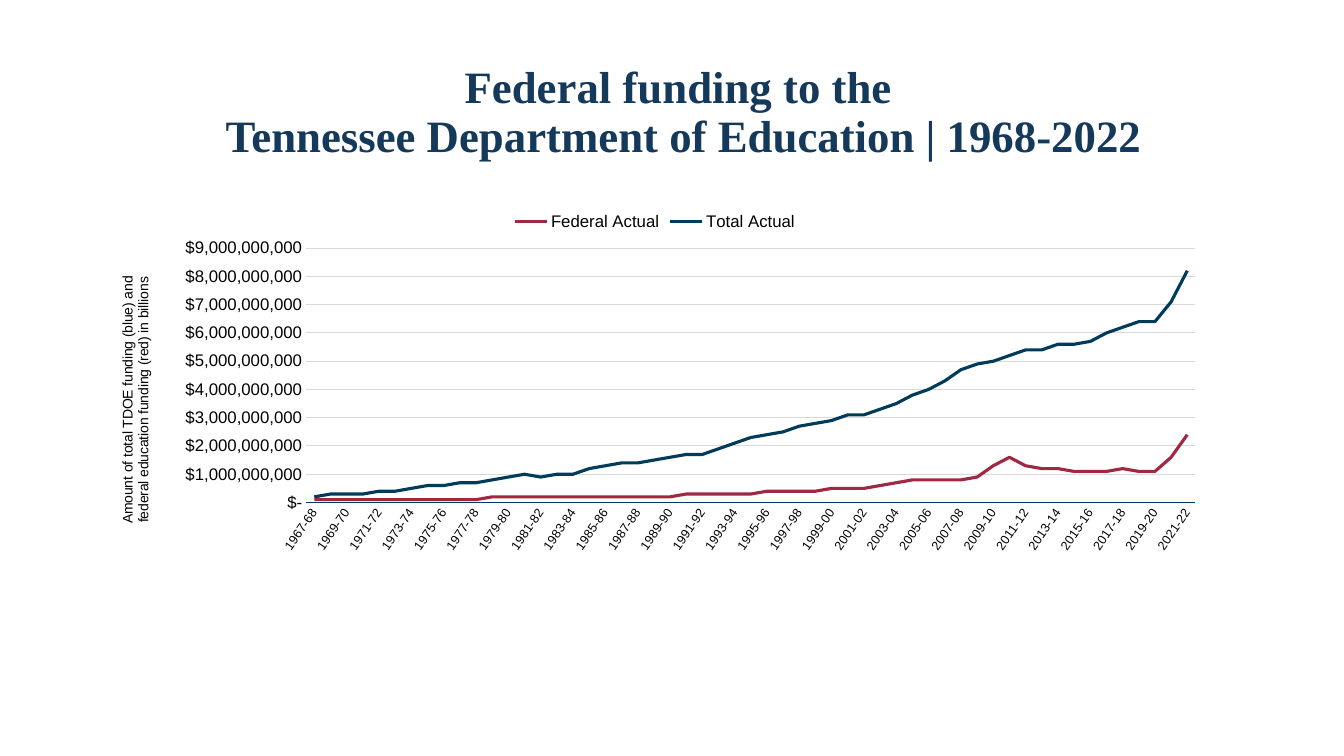
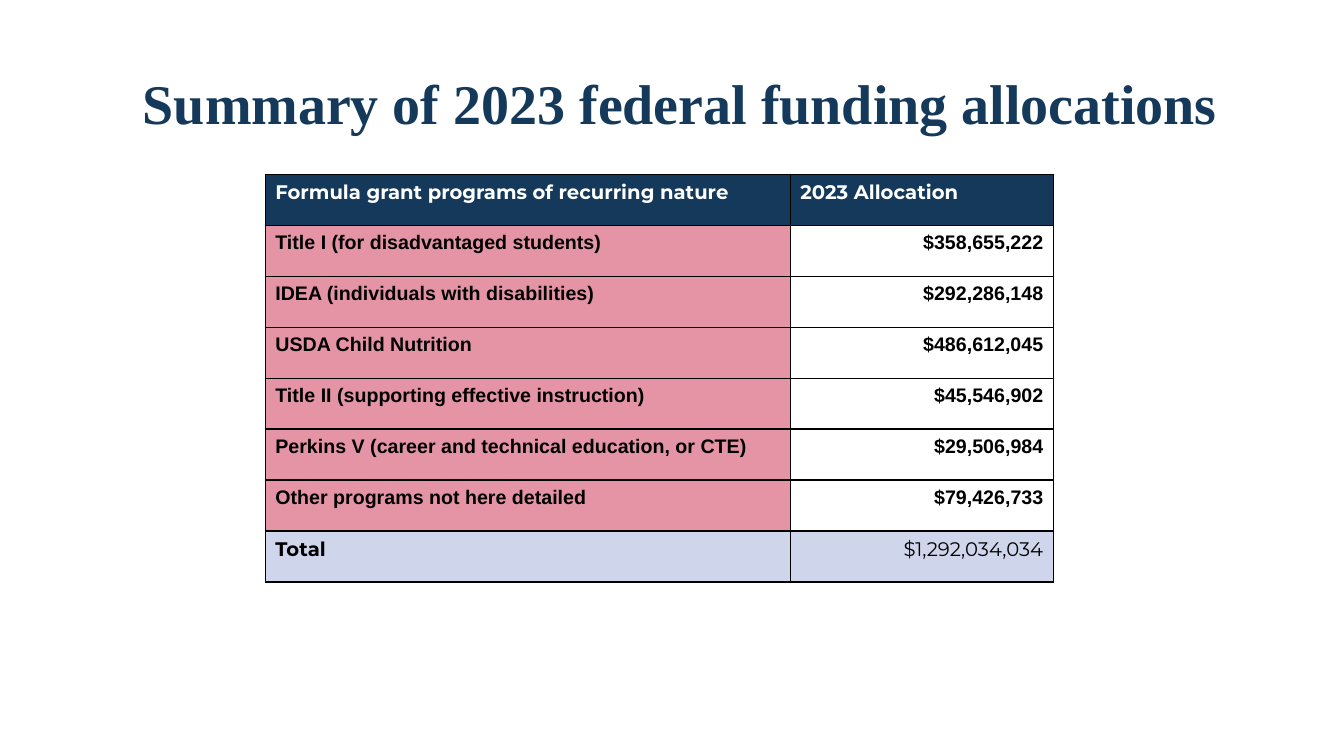
from lxml import etree
from pptx import Presentation
from pptx.chart import data as chart_data
from pptx.dml.color import RGBColor
from pptx.enum import chart as ch, text
from pptx.oxml import ns, parse_xml
from pptx.util import Pt

COLORS = {
    "navy": "14395A", "blue": "003C5A", "red": "A02843", "pink": "E494A5",
    "lavender": "CFD5EA", "grid": "D9D9D9", "black": "000000", "white": "FFFFFF",
}

TENTHS = 10 ** 8
FEDERAL = [
    1, 1, 1, 1, 1, 1, 1, 1, 1, 1, 1, 2, 2, 2, 2, 2, 2, 2, 2, 2, 2, 2, 2, 3, 3, 3, 3, 3,
    4, 4, 4, 4, 5, 5, 5, 6, 7, 8, 8, 8, 8, 9, 13, 16, 13, 12, 12, 11, 11, 11, 12, 11,
    11, 16, 24,
]
TOTAL = [
    2, 3, 3, 3, 4, 4, 5, 6, 6, 7, 7, 8, 9, 10, 9, 10, 10, 12, 13, 14, 14, 15, 16, 17,
    17, 19, 21, 23, 24, 25, 27, 28, 29, 31, 31, 33, 35, 38, 40, 43, 47, 49, 50, 52, 54,
    54, 56, 56, 57, 60, 62, 64, 64, 71, 82,
]
SCHOOL_YEARS = [f"{year}-{(year + 1) % 100:02d}" for year in range(1967, 2022)]

ALLOCATIONS = [
    ("Title I (for disadvantaged students)", "$358,655,222"),
    ("IDEA (individuals with disabilities)", "$292,286,148"),
    ("USDA Child Nutrition", "$486,612,045"),
    ("Title II (supporting effective instruction)", "$45,546,902"),
    ("Perkins V (career and technical education, or CTE)", "$29,506,984"),
    ("Other programs not here detailed", "$79,426,733"),
]


class Deck:
    title_font = "Times New Roman"
    body_font = "Arial"
    accent_font = "Montserrat"

    def __init__(self):
        self.prs = Presentation()
        self.prs.slide_width, self.prs.slide_height = Pt(960), Pt(540)
        self.slide = None

    def color(self, name):
        return RGBColor.from_string(COLORS[name])

    def style(self, font, size, color="black", name=body_font, bold=False):
        font.size, font.name, font.bold = Pt(size), name, bold
        font.color.rgb = self.color(color)

    def line(self, line, color, width):
        line.color.rgb = self.color(color)
        line.width = Pt(width)

    def add_slide(self, heading, box, size):
        self.slide = self.prs.slides.add_slide(self.prs.slide_layouts[5])
        title = self.slide.shapes.title
        title.left, title.top, title.width, title.height = map(Pt, box)
        frame = title.text_frame
        frame.text = heading
        frame.word_wrap = True
        frame.auto_size = text.MSO_AUTO_SIZE.NONE
        frame.vertical_anchor = text.MSO_ANCHOR.MIDDLE
        paragraph = frame.paragraphs[0]
        paragraph.alignment = text.PP_ALIGN.CENTER
        paragraph.line_spacing = 0.9
        self.style(paragraph.font, size, "navy", self.title_font, True)

    def place(self, element, index, **fractions):
        for old in element.findall(ns.qn("c:layout")):
            element.remove(old)
        layout = etree.Element(ns.qn("c:layout"))
        manual = etree.SubElement(layout, ns.qn("c:manualLayout"))
        if "w" in fractions:
            etree.SubElement(manual, ns.qn("c:layoutTarget")).set("val", "inner")
        for axis in "xy":
            etree.SubElement(manual, ns.qn(f"c:{axis}Mode")).set("val", "edge")
        for key, value in fractions.items():
            etree.SubElement(manual, ns.qn(f"c:{key}")).set("val", str(value))
        element.insert(index, layout)

    def line_chart(self, box, categories, series, axis_lines):
        data = chart_data.CategoryChartData()
        data.categories = categories
        for name, values, _ in series:
            data.add_series(name, values)
        chart = self.slide.shapes.add_chart(
            ch.XL_CHART_TYPE.LINE, *map(Pt, box), data).chart
        self.style(chart.font, 10, name="Calibri")
        chart.has_title = False
        chart.has_legend = True
        chart.legend.position = ch.XL_LEGEND_POSITION.TOP
        chart.legend.include_in_layout = False
        self.style(chart.legend.font, 12)
        plot = chart.plots[0]
        plot.vary_by_categories = False
        for drawn, (_, _, color) in zip(plot.series, series):
            drawn.smooth = False
            self.line(drawn.format.line, color, 2.25)
        self.year_axis(chart.category_axis)
        self.dollar_axis(chart.value_axis, axis_lines)
        plot_area = chart.element.find(".//" + ns.qn("c:plotArea"))
        self.place(plot_area, 0, x=0.19, y=0.13, w=0.79, h=0.71)

    def year_axis(self, axis):
        axis.major_tick_mark = ch.XL_TICK_MARK.NONE
        self.line(axis.format.line, "blue", 0.75)
        self.style(axis.tick_labels.font, 9)
        element = chart_axis = axis.tick_labels.font and axis.format and axis._element
        body = chart_axis.find(ns.qn("c:txPr")).find(ns.qn("a:bodyPr"))
        body.set("rot", "-3300000")
        body.set("vert", "horz")
        skip = etree.Element(ns.qn("c:tickLblSkip"))
        skip.set("val", "2")
        element.find(ns.qn("c:noMultiLvlLbl")).addprevious(skip)

    def dollar_axis(self, axis, title_lines):
        axis.minimum_scale, axis.maximum_scale = 0, 90 * TENTHS
        axis.major_unit = 10 * TENTHS
        axis.major_tick_mark = ch.XL_TICK_MARK.NONE
        axis.format.line.fill.background()
        self.line(axis.major_gridlines.format.line, "grid", 0.75)
        self.style(axis.tick_labels.font, 12)
        axis.tick_labels.number_format = '"$"#,##0;"$"(#,##0);"$-"'
        axis.tick_labels.number_format_is_linked = False
        frame = axis.axis_title.text_frame
        frame.text = "\n".join(title_lines)
        for paragraph in frame.paragraphs:
            self.style(paragraph.font, 10)
        body = frame._txBody.find(ns.qn("a:bodyPr"))
        body.set("rot", "-5400000")
        body.set("vert", "horz")
        self.place(axis.axis_title._element, 1, x=0.02, y=0.2)

    def table(self, origin, widths, row_height, rows):
        table = self.slide.shapes.add_table(
            len(rows), len(widths), *map(Pt, origin),
            Pt(sum(widths)), Pt(row_height * len(rows))).table
        table.horz_banding = False
        for column, width in zip(table.columns, widths):
            column.width = Pt(width)
        for row, contents in zip(table.rows, rows):
            row.height = Pt(row_height)
            for cell, content in zip(row.cells, contents):
                self.cell(cell, **content)

    def cell(self, cell, words, fill=None, right=False, color="black",
             font=body_font, bold=True):
        cell.text = words
        paragraph = cell.text_frame.paragraphs[0]
        paragraph.line_spacing = 1.07
        paragraph.alignment = text.PP_ALIGN.RIGHT if right else text.PP_ALIGN.LEFT
        self.style(paragraph.font, 14, color, font, bold)
        if fill:
            cell.fill.solid()
            cell.fill.fore_color.rgb = self.color(fill)
        else:
            cell.fill.background()
        properties = cell._tc.get_or_add_tcPr()
        for index, side in enumerate("LRTB"):
            properties.insert(index, parse_xml(
                f'<a:ln{side} {ns.nsdecls("a")} w="{Pt(1)}"><a:solidFill>'
                f'<a:srgbClr val="{COLORS["black"]}"/></a:solidFill></a:ln{side}>'))


def main():
    deck = Deck()

    deck.add_slide(
        "Federal funding to the \vTennessee Department of Education | 1968-2022",
        (30, 29, 917, 104), 32)
    deck.line_chart(
        (66, 144, 804, 256), SCHOOL_YEARS,
        [("Federal Actual", [value * TENTHS for value in FEDERAL], "red"),
         ("Total Actual", [value * TENTHS for value in TOTAL], "blue")],
        ["Amount of total TDOE funding (blue) and",
         "federal education funding (red) in billions"])

    deck.add_slide("Summary of 2023 federal funding allocations",
                   (66, 41, 839, 70), 40)
    header = dict(fill="navy", color="white", font=deck.accent_font)
    total = dict(fill="lavender", font=deck.accent_font)
    deck.table((189.5, 124.5), (375, 188), 36.4, [
        (dict(words="Formula grant programs of recurring nature", **header),
         dict(words="2023 Allocation", **header)),
        *[(dict(words=program, fill="pink"), dict(words=amount, right=True))
          for program, amount in ALLOCATIONS],
        (dict(words="Total", **total),
         dict(words="$1,292,034,034", right=True, bold=False, **total)),
    ])

    deck.prs.save("out.pptx")


if __name__ == "__main__":
    main()
